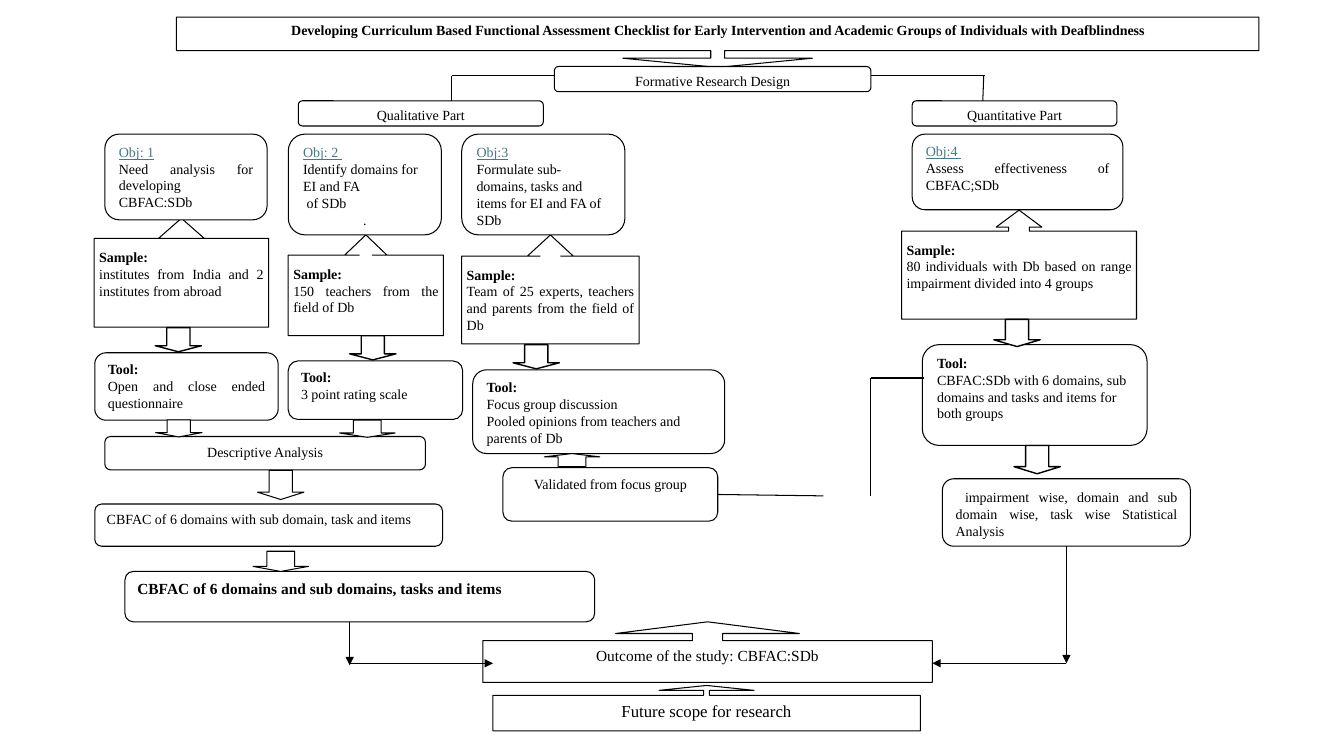
import pptx
import pptx.util
import pptx.dml.color
import pptx.enum.shapes
import pptx.enum.text
import pptx.oxml

Pt = pptx.util.Pt
Kind = pptx.enum.shapes.MSO_SHAPE
Align = pptx.enum.text.PP_ALIGN
LEFT, CENTER, JUSTIFY = Align.LEFT, Align.CENTER, Align.JUSTIFY

FONT = "Times New Roman"
BLACK, WHITE, TEAL = "000000", "FFFFFF", "467886"

# Content: left, top, width, height, adjustments, alignment, text size, paragraphs
TITLE = (126, 12.2, 773.3, 36, (0.274, 1.881, 0.182, 0.666), CENTER, 10, [
    "Developing Curriculum Based Functional Assessment Checklist for Early Intervention "
    "and Academic Groups of Individuals with Deafblindness"])
SAMPLES = [
    (67.3, 155.9, 124.6, 77.8, (0, 0.21, 0.185, 0.821), JUSTIFY, 10,
     ["Sample:", "institutes from India and 2 institutes from abroad"]),
    (205.9, 167.8, 110.9, 72, (0.129, 0.21, 0.201, 0.827), JUSTIFY, 10,
     ["Sample:", "150 teachers from the field of Db"]),
    (329.8, 167.8, 126.7, 77.8, (0.189, 0.21, 0.194, 0.808), JUSTIFY, 10,
     ["Sample:", "Team of 25 experts, teachers and parents from the field of Db"]),
    (644, 150.1, 167.8, 77.8, (0.189, 0.21, 0.156, 0.808), JUSTIFY, 10,
     ["Sample:", "80 individuals with Db based on range impairment divided into 4 groups"]),
]
RESULTS = [
    (344.9, 444.2, 321.1, 43.2, (0.501, 1.519, 0.193, 0.688), CENTER, 11,
     ["Outcome of the study: CBFAC:SDb"]),
    (352.1, 489.6, 305.3, 32.4, (0.129, 1.047, 0.109, 0.782), CENTER, 12,
     ["Future scope for research"]),
]

# Boxes: left, top, width, height, alignment, text size, paragraphs
ROUND_BOXES = [
    (396, 47.5, 226.1, 18, CENTER, 10, ["Formative Research Design"]),
    (74.9, 311.8, 229, 23.8, CENTER, 10, ["Descriptive Analysis"]),
    (359.3, 334.1, 153.4, 38.2, CENTER, 10, ["Validated from focus group"]),
]
PROCESS_BOXES = [
    (213.1, 72, 175, 18, CENTER, 10, ["Qualitative Part"]),
    (651.6, 72, 146.2, 18, CENTER, 10, ["Quantitative Part"]),
    (74.9, 95.8, 115.9, 61.2, JUSTIFY, 10,
     ["Obj: 1", "Need analysis for developing CBFAC:SDb"]),
    (205.9, 95.8, 109.4, 72, LEFT, 10,
     ["Obj: 2 ", "Identify domains for", "EI and FA", " of SDb", "."]),
    (329.8, 95.8, 116.6, 72, LEFT, 10,
     ["Obj:3", "Formulate sub-domains, tasks and items for EI and FA of SDb"]),
    (651.6, 95.8, 150.5, 54, JUSTIFY, 10,
     ["Obj:4 ", "Assess effectiveness of CBFAC;SDb"]),
    (67.7, 252, 131, 48.2, JUSTIFY, 10,
     ["Tool:", "Open and close ended questionnaire"]),
    (205.9, 257.8, 124.6, 41.8, LEFT, 10, ["Tool:", "3 point rating scale"]),
    (337.7, 264.2, 180, 59.8, LEFT, 10,
     ["Tool:", "Focus group discussion", "Pooled opinions from teachers and parents of Db"]),
    (658.8, 246.2, 160.6, 72, LEFT, 10,
     ["Tool:", "CBFAC:SDb with 6 domains, sub domains and tasks and items for both groups"]),
    (67.7, 360, 248.4, 30.2, JUSTIFY, 10,
     ["CBFAC of 6 domains with sub domain, task and items"]),
    (89.3, 408.2, 335.5, 36, JUSTIFY, 11,
     ["CBFAC of 6 domains and sub domains, tasks and items"]),
    (673.2, 342, 177.1, 48.2, JUSTIFY, 10,
     [" |impairment wise, domain and sub domain wise, task wise Statistical Analysis"]),
]

# Block arrows: left, top, width, height, line weight
DOWN_ARROWS = [
    (110.9, 234, 33.1, 17.3, 1), (249.8, 239.8, 33.1, 17.3, 1),
    (366.5, 246.2, 33.1, 17.3, 1), (709.9, 228.2, 33.1, 19.4, 1),
    (724.3, 318.2, 33.1, 20.2, 1), (111.2, 299.9, 33.1, 12.2, 0.75),
    (242.6, 300.2, 39.6, 12.2, 0.75), (184, 335.9, 33.1, 20.9, 0.75),
    (180.7, 393.8, 39.6, 14.4, 0.75),
]
UP_ARROW = (388.8, 324, 39.6, 9.4, 0.75)

# Lines: start x, start y, end x, end y, arrowhead
LINES = [
    (396.7, 54, 322.6, 54, False), (322.6, 54, 322.6, 72, False),
    (703.4, 54, 622.1, 54, False), (702, 72, 702.7, 54, False),
    (622.1, 270, 622.1, 354.2, False), (660.2, 270, 622.1, 270, False),
    (761.75, 473.8, 666, 473.8, True),
    (249.8, 444.2, 249.8, 475.2, True), (249.8, 473.8, 352.1, 473.8, True),
]
VALIDATED_LINE = (588.2, 354.2, 512.7, 353.2, False)
STATISTICS_LINE = (761.75, 390.2, 761.75, 473.8, True)

deck = pptx.Presentation()
deck.slide_width, deck.slide_height = Pt(960), Pt(540)
page = deck.slides.add_slide(deck.slide_layouts[6])


def color(hex_code):
    return pptx.dml.color.RGBColor.from_string(hex_code)


def add_outline(kind, left, top, width, height, weight=0.75, adjustments=()):
    shape = page.shapes.add_shape(kind, Pt(left), Pt(top), Pt(width), Pt(height))
    shape.shadow.inherit = False
    shape.fill.solid()
    shape.fill.fore_color.rgb = color(WHITE)
    shape.line.color.rgb = color(BLACK)
    shape.line.width = Pt(weight)
    for index, value in enumerate(adjustments):
        shape.adjustments[index] = value
    return shape


def write(shape, align, size, paragraphs, bold=False):
    frame = shape.text_frame
    frame.word_wrap = True
    frame.vertical_anchor = pptx.enum.text.MSO_ANCHOR.TOP
    for index, text in enumerate(paragraphs):
        para = frame.add_paragraph() if index else frame.paragraphs[0]
        para.alignment = CENTER if text == "." else align
        objective = text.startswith("Obj")
        for part in text.split("|"):
            span = para.add_run()
            span.text = part
            span.font.name = FONT
            span.font.size = Pt(size)
            span.font.bold = bold or text in ("Sample:", "Tool:")
            span.font.underline = objective
            span.font.color.rgb = color(TEAL if objective else BLACK)


def add_box(kind, left, top, width, height, align, size, paragraphs, bold=False):
    box = add_outline(kind, left, top, width, height)
    write(box, align, size, paragraphs, bold)
    return box


def add_callout(kind, left, top, width, height, adjustments, align, size, paragraphs, bold=False):
    callout = add_outline(kind, left, top, width, height, adjustments=adjustments)
    write(callout, align, size, paragraphs, bold)
    return callout


def add_line(x1, y1, x2, y2, arrowhead):
    line = page.shapes.add_connector(
        pptx.enum.shapes.MSO_CONNECTOR.STRAIGHT, Pt(x1), Pt(y1), Pt(x2), Pt(y2))
    line.line.color.rgb = color(BLACK)
    line.line.width = Pt(0.75)
    if arrowhead:
        tail = pptx.oxml.ns.qn("a:tailEnd")
        line.line._get_or_add_ln().makeelement(tail)
        pptx_line = line.line._get_or_add_ln()
        pptx_line.append(pptx_line.makeelement(tail, {"type": "triangle"}))
    properties = line._element.spPr
    properties.append(properties.makeelement(pptx.oxml.ns.qn("a:effectLst")))
    return line


# Callouts: title, samples and results
add_callout(Kind.DOWN_ARROW_CALLOUT, *TITLE, bold=True)
for sample in SAMPLES:
    frame = add_callout(Kind.UP_ARROW_CALLOUT, *sample).text_frame
    frame.margin_left = frame.margin_right = Pt(3.6)
    frame.margin_top = frame.margin_bottom = Pt(7.2)
for result in RESULTS:
    add_callout(Kind.UP_ARROW_CALLOUT, *result)

# Rounded boxes
round_boxes = [add_box(Kind.ROUNDED_RECTANGLE, *item) for item in ROUND_BOXES]
process_boxes = [add_box(Kind.FLOWCHART_ALTERNATE_PROCESS, *item, bold=item[5] == 11)
                 for item in PROCESS_BOXES]
validated, statistics = round_boxes[-1], process_boxes[-1]
lead = statistics.text_frame.paragraphs[0].runs[0]
lead.font.name, lead.font.size = "Calibri", Pt(11)

# Block arrows
for arrow in DOWN_ARROWS:
    add_outline(Kind.DOWN_ARROW, *arrow, adjustments=(0.5, 0.25))
add_outline(Kind.UP_ARROW, *UP_ARROW, adjustments=(0.5, 0.25))

# Lines
for line in LINES:
    add_line(*line)
add_line(*VALIDATED_LINE).end_connect(validated, 3)
add_line(*STATISTICS_LINE).begin_connect(statistics, 2)

deck.save("out.pptx")
